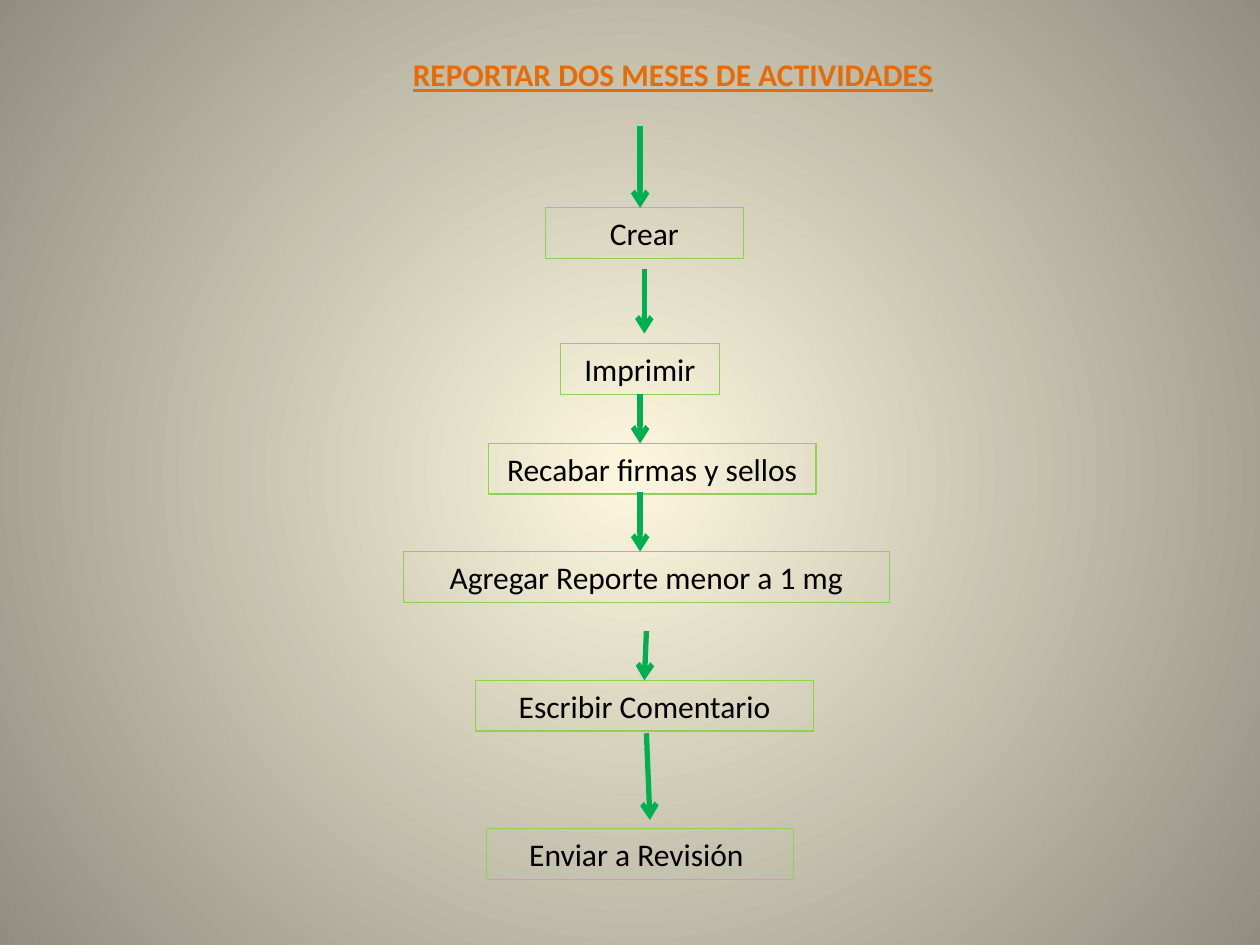
from dataclasses import dataclass

from lxml.etree import SubElement
from pptx import Presentation
from pptx.dml.color import RGBColor as RGB
from pptx.enum.shapes import MSO_CONNECTOR as Connector, MSO_SHAPE as Shape
from pptx.enum.text import MSO_ANCHOR as Anchor, MSO_AUTO_SIZE as AutoSize, PP_ALIGN as Align
from pptx.oxml.ns import qn
from pptx.util import Pt


@dataclass(frozen=True)
class Theme:
    glow: RGB = RGB.from_string("FCF7DD")
    edge: RGB = RGB.from_string("918E81")
    heading: RGB = RGB.from_string("E46C0A")
    ink: RGB = RGB.from_string("000000")
    border: RGB = RGB.from_string("92D050")
    arrow: RGB = RGB.from_string("00B050")
    font: str = "Calibri"
    size: Pt = Pt(18)
    border_width: Pt = Pt(0.75)
    arrow_width: Pt = Pt(3)


theme = Theme()
LABEL_HEIGHT = 29
FRAME_FORMAT = {"word_wrap": True, "auto_size": AutoSize.SHAPE_TO_FIT_TEXT,
                "vertical_anchor": Anchor.TOP}
STEP_FONT = {"name": theme.font, "size": theme.size}
HEADING_FONT = {**STEP_FONT, "bold": True, "underline": True}


def write_label(label, text, font_format, color):
    frame = label.text_frame
    for key, value in FRAME_FORMAT.items():
        setattr(frame, key, value)
    paragraph = frame.paragraphs[0]
    paragraph.alignment = Align.CENTER
    run = paragraph.add_run()
    run.text = text
    for key, value in font_format.items():
        setattr(run.font, key, value)
    run.font.color.rgb = color


deck = Presentation()
deck.slide_width, deck.slide_height = Pt(720), Pt(540)
slide = deck.slides.add_slide(deck.slide_layouts[6])

backdrop = slide.background.fill
backdrop.gradient()
for stop, color in zip(backdrop.gradient_stops, (theme.glow, theme.edge)):
    stop.color.rgb = color
gradient = slide.element.find(".//" + qn("a:gradFill"))
gradient.remove(gradient.find(qn("a:lin")))
radial = SubElement(gradient, qn("a:path"), {"path": "circle"})
SubElement(radial, qn("a:fillToRect"), dict.fromkeys("ltrb", "50000"))

heading = slide.shapes.add_textbox(Pt(200.2), Pt(28.1), Pt(368.6), Pt(LABEL_HEIGHT))
write_label(heading, "REPORTAR DOS MESES DE ACTIVIDADES", HEADING_FONT, theme.heading)

steps = [
    ("Crear", 311.6, 118.6, 113.2),
    ("Imprimir", 320.2, 196.4, 90.9),
    ("Recabar firmas y sellos", 279.1, 253.4, 187.2),
    ("Agregar Reporte menor a 1 mg", 230.4, 315.2, 277.9),
    ("Escribir Comentario", 271.8, 388.8, 193),
    ("Enviar a Revisión ", 277.9, 473.4, 175.7),
]
for text, left, top, width in steps:
    step = slide.shapes.add_shape(
        Shape.RECTANGLE, Pt(left), Pt(top), Pt(width), Pt(LABEL_HEIGHT))
    step.shadow.inherit = False
    step.fill.background()
    step.line.color.rgb = theme.border
    step.line.width = theme.border_width
    write_label(step, text, STEP_FONT, theme.ink)

arrows = [
    (365.8, 72, 365.8, 118.8),
    (368.2, 153.6, 368.2, 190.6),
    (365.8, 225.4, 365.8, 253.4),
    (365.8, 281.4, 365.8, 315.2),
    (369.4, 360.6, 368.2, 388.8),
    (369.4, 419, 371.4, 468.6),
]
for ends in arrows:
    arrow = slide.shapes.add_connector(Connector.STRAIGHT, *map(Pt, ends))
    arrow.line.color.rgb = theme.arrow
    arrow.line.width = theme.arrow_width
    SubElement(arrow.line._get_or_add_ln(), qn("a:tailEnd"), {"type": "arrow"})
    SubElement(arrow.element.spPr, qn("a:effectLst"))

deck.save("out.pptx")
